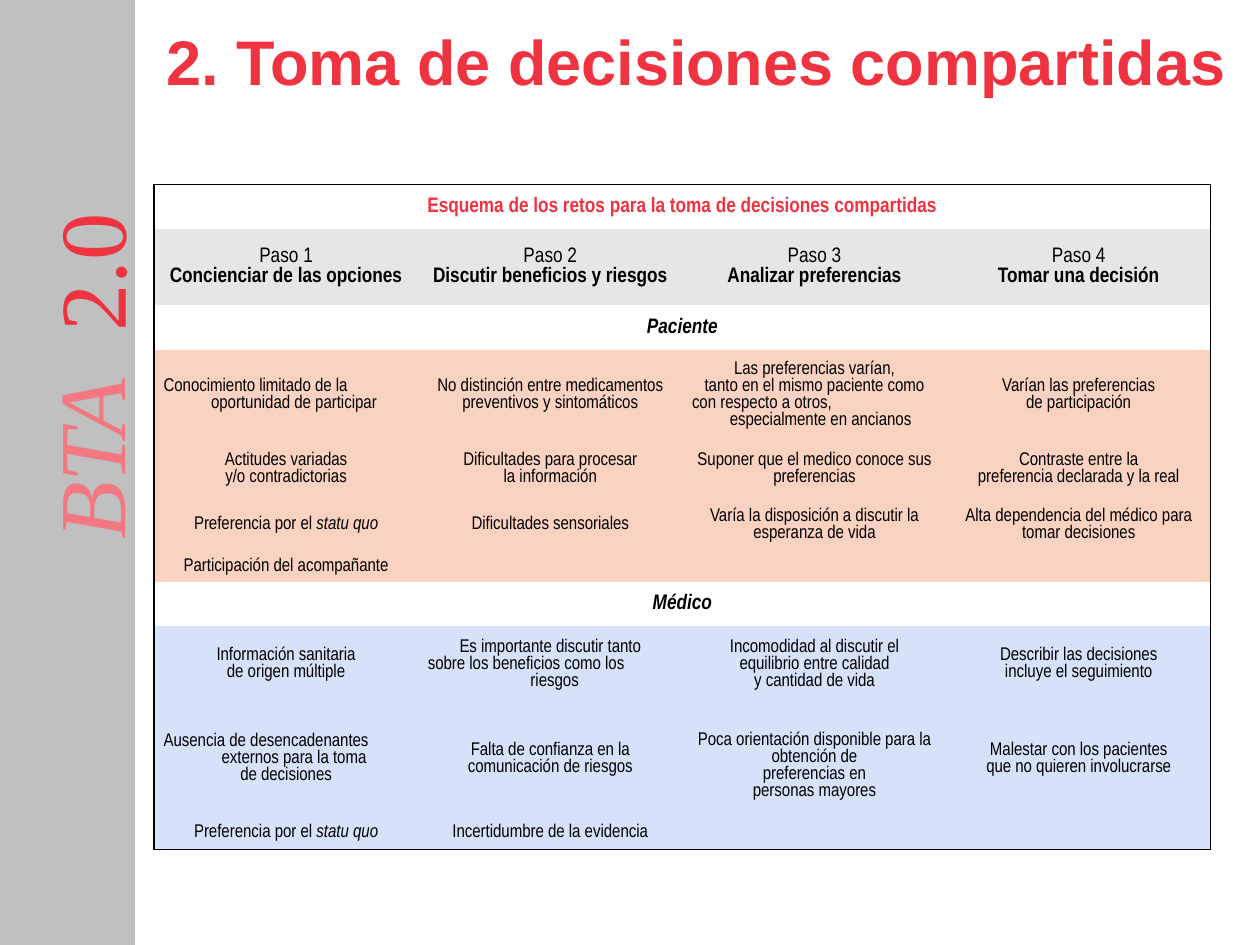
import pptx
import pptx.util
import pptx.dml.color
import pptx.enum.shapes
import pptx.enum.text
from lxml import etree

Pt = pptx.util.Pt
Align = pptx.enum.text.PP_ALIGN
Anchor = pptx.enum.text.MSO_ANCHOR
HUES = {"red": "EF3340", "rose": "F47881", "gray": "C0C0C0", "black": "000000",
        "head": "E7E6E6", "peach": "FAD2C2", "blue": "D6E1FA"}
NS = "http://schemas.openxmlformats.org/drawingml/2006/main"


def hue(name):
    return pptx.dml.color.RGBColor.from_string(HUES[name])


def add_run(para, text, face, size, color, bold=False, italic=False):
    run = para.add_run()
    run.text = text
    font = run.font
    font.name, font.size, font.bold, font.italic = face, Pt(size), bold, italic
    font.color.rgb = hue(color)
    return run


deck = pptx.Presentation()
deck.slide_width, deck.slide_height = Pt(720), Pt(540)
slide = deck.slides.add_slide(deck.slide_layouts[5])

# Side band
band = slide.shapes.add_shape(pptx.enum.shapes.MSO_SHAPE.RECTANGLE,
                              Pt(0), Pt(0), Pt(77), Pt(540))
band.shadow.inherit = False
band.fill.solid()
band.fill.fore_color.rgb = hue("gray")
band.line.color.rgb = hue("gray")
band.line.width = Pt(0.75)

# Upright label, with a widened space between its two parts
label = slide.shapes.add_textbox(Pt(-55.5), Pt(152.5), Pt(232.5), Pt(93.5))
label.rotation = 270
label.text_frame.word_wrap = True
label.text_frame.margin_top = Pt(4)
para = label.text_frame.paragraphs[0]
add_run(para, "BTA", "Times New Roman", 54, "rose", italic=True)
gap = add_run(para, " ", "Times New Roman", 54, "rose", italic=True)
gap.font._element.set("spc", "1350")
add_run(para, "2.0", "Times New Roman", 54, "red")

# Title
title = slide.shapes.title
title.left, title.top, title.width, title.height = Pt(88), Pt(6), Pt(632), Pt(57)
title.text_frame.vertical_anchor = Anchor.MIDDLE
para = title.text_frame.paragraphs[0]
para.alignment = Align.LEFT
add_run(para, "2. Toma de decisiones compartidas", "Arial", 36, "red", bold=True)

# Rows: height, kind, fill, cells. A cell is a list of lines; "<" sets a line
# to the left, a pair gives a line and its indent, "*" marks italics.
rows = [
    (25.5, "title", None, [["Esquema de los retos para la toma de decisiones compartidas"]]),
    (43.5, "head", "head", [
        ["Paso 1", "Concienciar de las opciones"],
        ["Paso 2", "Discutir beneficios y riesgos"],
        ["Paso 3", "Analizar preferencias"],
        ["Paso 4", "Tomar una decisión"]]),
    (25.5, "group", None, [["Paciente"]]),
    (52, "body", "peach", [
        ["<Conocimiento limitado de la", ("oportunidad de participar", 9)],
        ["No distinción entre medicamentos preventivos y sintomáticos"],
        ["Las preferencias varían,", "tanto en el mismo paciente como",
         "<con respecto a otros,", ("especialmente en ancianos", 7)],
        ["Varían las preferencias", "de participación"]]),
    (32.5, "body", "peach", [
        ["Actitudes variadas", "y/o contradictorias"],
        ["Dificultades para procesar", "la información"],
        ["Suponer que el medico conoce sus preferencias"],
        ["Contraste entre la", "preferencia declarada y la real"]]),
    (31, "body", "peach", [
        ["Preferencia por el *statu quo"],
        ["Dificultades sensoriales"],
        ["Varía la disposición a discutir la", "esperanza de vida"],
        ["Alta dependencia del médico para tomar decisiones"]]),
    (17, "body", "peach", [["Participación del acompañante"], [], [], []]),
    (25.5, "group", None, [["Médico"]]),
    (43.5, "body", "blue", [
        ["Información sanitaria", "de origen múltiple"],
        ["Es importante discutir tanto", "<sobre los beneficios como los", ("riesgos", 5)],
        ["Incomodidad al discutir el", "equilibrio entre calidad", "y cantidad de vida"],
        ["Describir las decisiones", "incluye el seguimiento"]]),
    (64.5, "body", "blue", [
        ["<Ausencia de desencadenantes", ("externos para la toma", 9), "de decisiones"],
        ["Falta de confianza en la", "comunicación de riesgos"],
        ["Poca orientación disponible para la obtención de",
         "preferencias en", "personas mayores"],
        ["Malestar con los pacientes", "que no quieren involucrarse"]]),
    (19.5, "body", "blue", [
        ["Preferencia por el *statu quo"], ["Incertidumbre de la evidencia"], [], []]),
]

# Table
frame = slide.shapes.add_table(len(rows), 4, Pt(88), Pt(105.5), Pt(604),
                               Pt(sum(row[0] for row in rows)))
table = frame.table
table.first_row = table.horz_banding = False
style = table._tbl.tblPr.find(f"{{{NS}}}tableStyleId")
style.text = "{2D5ABB26-0587-4C30-8999-92F81FD0307C}"
for col in table.columns:
    col.width = Pt(151)

for r, (high, kind, fill, cells) in enumerate(rows):
    table.rows[r].height = Pt(high)
    wide = len(cells) == 1
    if wide:
        table.cell(r, 0).merge(table.cell(r, 3))
    size = 10.5 if kind == "body" else 12
    color = "red" if kind == "title" else "black"
    for c in range(4):
        cell = table.cell(r, c)
        cell.vertical_anchor = Anchor.MIDDLE
        cell.margin_left = cell.margin_right = Pt(5.5)
        cell.margin_top = cell.margin_bottom = Pt(0)
        if fill:
            cell.fill.solid()
            cell.fill.fore_color.rgb = hue(fill)
        else:
            cell.fill.background()

        # Lines of text
        lines = cells[c] if c < len(cells) else []
        if lines and lines[0].startswith("Poca"):
            cell.margin_top = Pt(8)
        for n, line in enumerate(lines):
            text, indent = line if isinstance(line, tuple) else (line, 0)
            para = cell.text_frame.paragraphs[0] if n == 0 else cell.text_frame.add_paragraph()
            para.alignment = Align.LEFT if text.startswith("<") else Align.CENTER
            para.line_spacing = 1.0
            if indent:
                para._p.get_or_add_pPr().set("marL", str(Pt(indent)))
            bold = kind in ("title", "group") or (kind == "head" and n == 1)
            for k, part in enumerate(text.lstrip("<").split("*")):
                add_run(para, part, "Arial Narrow", size, color, bold,
                        kind == "group" or k == 1)
        if not lines:
            end = etree.SubElement(cell.text_frame.paragraphs[0]._p, f"{{{NS}}}endParaRPr")
            end.set("sz", "1050")

        # Outer border
        edges = {"lnL": c == 0, "lnR": c == 3 or wide and c == 0,
                 "lnT": r == 0, "lnB": r == len(rows) - 1}
        sides = [name for name, shown in edges.items() if shown]
        for spot, name in enumerate(sides):
            edge = etree.Element(f"{{{NS}}}{name}", w=str(Pt(0.75)))
            paint = etree.SubElement(edge, f"{{{NS}}}solidFill")
            etree.SubElement(paint, f"{{{NS}}}srgbClr", val=HUES["black"])
            cell._tc.get_or_add_tcPr().insert(spot, edge)

deck.save("out.pptx")
